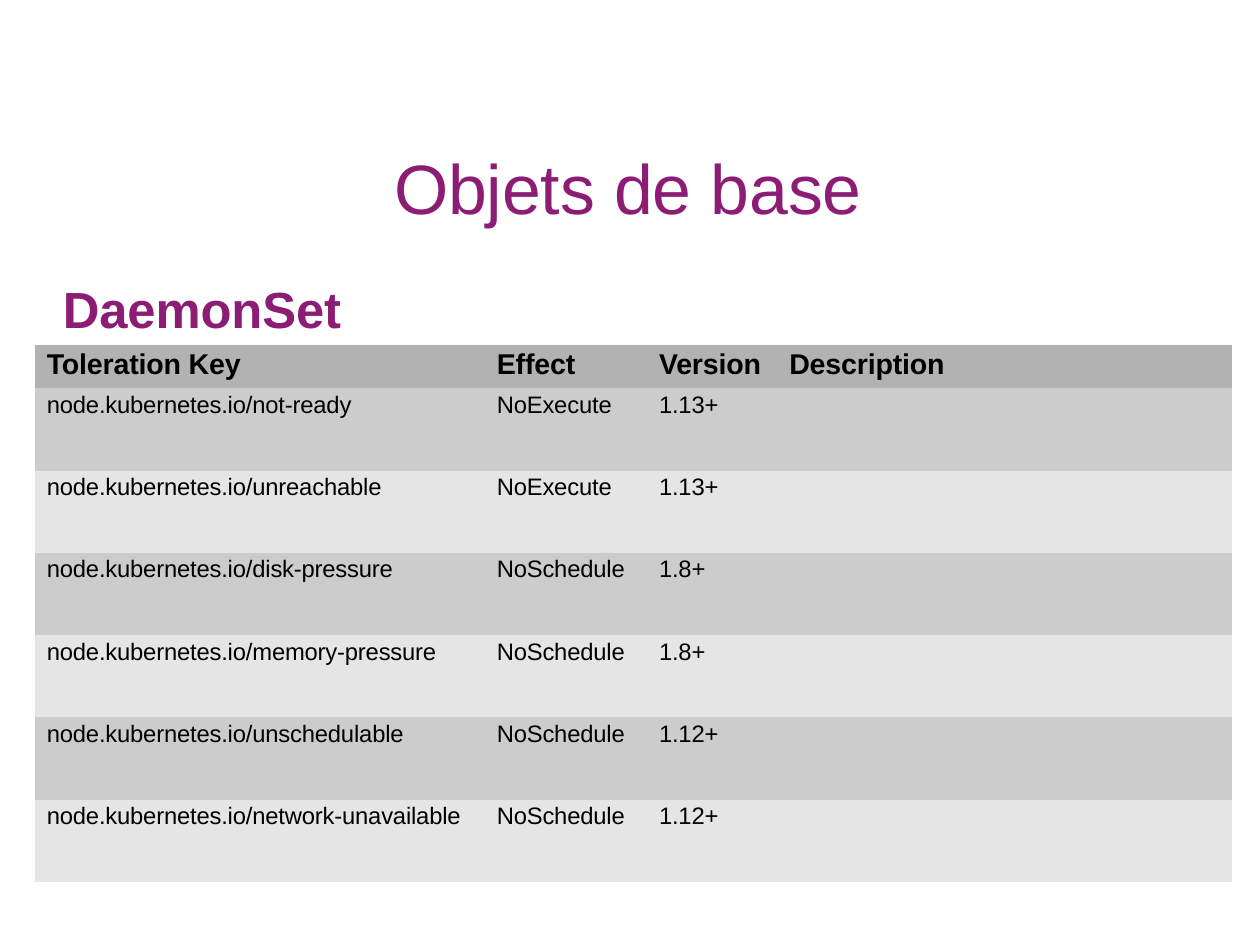
from dataclasses import dataclass

from lxml.etree import SubElement
from pptx import Presentation
from pptx.dml.color import RGBColor as Rgb
from pptx.enum.text import MSO_ANCHOR as Anchor, MSO_AUTO_SIZE as AutoSize, PP_ALIGN as Align
from pptx.oxml.ns import qn
from pptx.util import Inches, Pt

TITLE = "Objets de base"
HEADING = "DaemonSet"
COLUMN_NAMES = ("Toleration Key", "Effect", "Version", "Description")
TOLERATIONS = [
    ("not-ready", "NoExecute", "1.13+"),
    ("unreachable", "NoExecute", "1.13+"),
    ("disk-pressure", "NoSchedule", "1.8+"),
    ("memory-pressure", "NoSchedule", "1.8+"),
    ("unschedulable", "NoSchedule", "1.12+"),
    ("network-unavailable", "NoSchedule", "1.12+"),
]
KEY_PREFIX = "node.kubernetes.io/"

SLIDE_SIZE = (Inches(11.03), Inches(8.28))
TITLE_AREA = (31.19, 14.61, 37.53, 9.18)
HEADING_AREA = (4.9, 28.62, 22.3, 6.76)
TABLE_CORNER = (2.81, 36.47)
COLUMN_SHARES = (35.54, 12.69, 10.52, 36.26)
HEADER_SHARE, ROW_SHARE = 4.59, 8.7
CELL_INDENTS = (0.1, 0.12, 0.14, 0.12)
NO_STYLE = "{2D5ABB26-0587-4C30-8999-92F81FD0307C}"


@dataclass(frozen=True)
class Theme:
    font: str = "Arial"
    accent: str = "8C1C74"
    ink: str = "000000"
    header: str = "B2B2B2"
    bands: tuple = ("CCCCCC", "E5E5E5")
    title_size: int = 44
    heading_size: int = 32
    header_size: int = 18
    row_size: int = 15
    tracking: str = "-10"


THEME = Theme()


def across(share):
    return round(SLIDE_SIZE[0] * share / 100)


def down(share):
    return round(SLIDE_SIZE[1] * share / 100)


def apply(target, formats):
    for attribute, value in formats.items():
        setattr(target, attribute, value)


def write(frame, words, size, color, bold=False):
    paragraph = frame.paragraphs[0]
    apply(paragraph, {"alignment": Align.LEFT, "space_before": Pt(0), "line_spacing": 1.0})
    run = paragraph.add_run()
    run.text = words
    apply(run.font, {"name": THEME.font, "size": Pt(size), "bold": bold})
    run.font.color.rgb = Rgb.from_string(color)
    run.font._element.set("spc", THEME.tracking) if hasattr(run.font, "_element") else \
        run._r.get_or_add_rPr().set("spc", THEME.tracking)


def place_heading(holder, area, words, size, bold=False):
    left, top, width, height = area
    apply(holder, {"left": across(left), "top": down(top),
                   "width": across(width), "height": down(height)})
    apply(holder.text_frame, {
        "margin_left": Inches(0.01), "margin_top": Inches(0.06), "margin_right": 0,
        "margin_bottom": 0, "vertical_anchor": Anchor.TOP, "word_wrap": False,
        "auto_size": AutoSize.NONE})
    write(holder.text_frame, words, size, THEME.accent, bold)


def add_tolerations(slide):
    rows = [COLUMN_NAMES] + [(KEY_PREFIX + key, effect, version, "")
                             for key, effect, version in TOLERATIONS]
    row_shares = [HEADER_SHARE] + [ROW_SHARE] * len(TOLERATIONS)
    table = slide.shapes.add_table(
        len(rows), len(COLUMN_NAMES), across(TABLE_CORNER[0]), down(TABLE_CORNER[1]),
        across(sum(COLUMN_SHARES)), down(sum(row_shares))).table
    apply(table, {"first_row": False, "horz_banding": False})
    properties = table._tbl.tblPr
    for style in properties.findall(qn("a:tableStyleId")):
        properties.remove(style)
    SubElement(properties, qn("a:tableStyleId")).text = NO_STYLE

    for column, share in zip(table.columns, COLUMN_SHARES):
        column.width = across(share)
    for index, (values, share) in enumerate(zip(rows, row_shares)):
        is_header = index == 0
        table.rows[index].height = down(share)
        fill = THEME.header if is_header else THEME.bands[(index - 1) % 2]
        size = THEME.header_size if is_header else THEME.row_size
        for position, (words, indent) in enumerate(zip(values, CELL_INDENTS)):
            cell = table.cell(index, position)
            apply(cell, {"margin_left": Inches(indent), "margin_top": Inches(0.03),
                         "margin_right": 0, "margin_bottom": 0,
                         "vertical_anchor": Anchor.TOP})
            cell.fill.solid()
            cell.fill.fore_color.rgb = Rgb.from_string(fill)
            if words:
                write(cell.text_frame, words, size, THEME.ink, is_header)
        if not is_header:
            table.cell(index, 2).merge(table.cell(index, 3))


def main():
    deck = Presentation()
    apply(deck, dict(zip(("slide_width", "slide_height"), SLIDE_SIZE)))
    slide = deck.slides.add_slide(deck.slide_layouts[5])
    place_heading(slide.shapes.title, TITLE_AREA, TITLE, THEME.title_size)
    place_heading(slide.shapes.add_textbox(0, 0, 0, 0), HEADING_AREA, HEADING,
                  THEME.heading_size, bold=True)
    add_tolerations(slide)
    deck.save("out.pptx")


if __name__ == "__main__":
    main()
